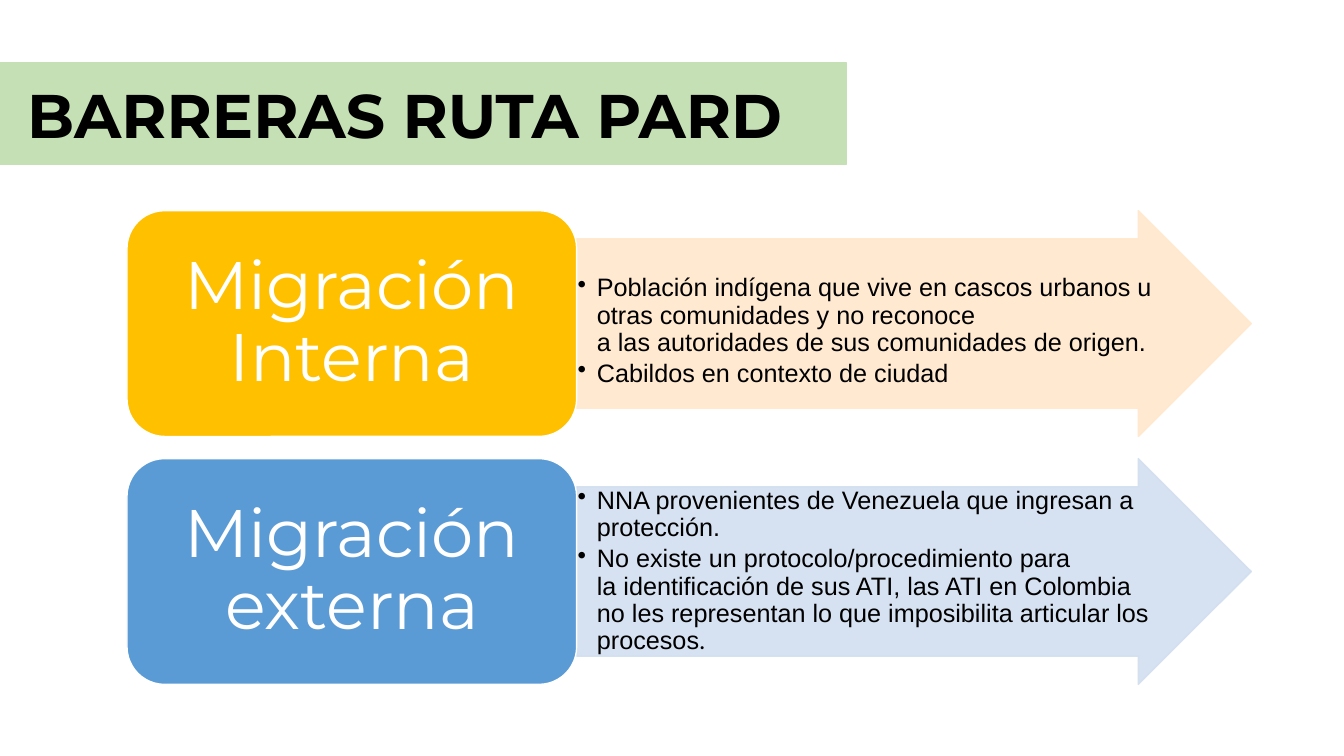
from lxml.etree import SubElement
from pptx import Presentation
from pptx.dml.color import RGBColor
from pptx.enum.shapes import MSO_SHAPE as Preset
from pptx.enum.text import MSO_ANCHOR as Anchor, PP_ALIGN as Align
from pptx.oxml.ns import qn
from pptx.util import Emu, Pt

PX = 9144  # one hundredth of an inch

BLACK = RGBColor(0x00, 0x00, 0x00)
WHITE = RGBColor(0xFF, 0xFF, 0xFF)
GREEN = RGBColor(0xC5, 0xE0, 0xB4)
AMBER = RGBColor(0xFF, 0xC0, 0x00)
PEACH = RGBColor(0xFF, 0xE8, 0xCC)
BLUE = RGBColor(0x5B, 0x9B, 0xD5)
PALE_BLUE = RGBColor(0xD2, 0xDF, 0xF0)

TITLE = {"name": "Montserrat", "size": Pt(44), "bold": True}
LABEL = {"name": "Montserrat", "size": Pt(48)}
BODY = {"name": "Arial", "size": Pt(18)}

# Each row: top, text offset, label, label colour, arrow colour, bullets.
# A bullet is a list of (text, font name); "~" is a non-breaking space.
ROWS = [
    (209, 63, "Migración Interna", AMBER, PEACH, [
        [("Población indígena que vive en~cascos urbanos u otras~comunidades "
          "y no reconoce a~las~autoridades de sus~comunidades de origen.", "Arial")],
        [("Cabildos en contexto de~ciudad", "Arial")],
    ]),
    (455, 28, "Migración externa", BLUE, PALE_BLUE, [
        [("NNA provenientes de Venezuela que~ingresan a protección.", "Arial")],
        [("No existe~un protocolo/procedimiento para la~identificación de sus "
          "ATI, las ATI en~Colombia no les~representan lo que imposibilita "
          "articular~los procesos", "Arial"), (".", "Calibri")],
    ]),
]


def px(*lengths):
    return [Emu(length * PX) for length in lengths]


def apply_format(target, values):
    for name, value in values.items():
        setattr(target, name, value)


def add_block(page, preset, place, fill, line, opacity=None, adjustments=()):
    """Add a filled, outlined shape; opacity is a percentage."""
    block = page.shapes.add_shape(preset, *px(*place))
    block.shadow.inherit = False
    for index, value in enumerate(adjustments):
        block.adjustments[index] = value
    block.fill.solid()
    block.fill.fore_color.rgb = fill
    block.line.color.rgb = line
    block.line.width = Pt(1)
    if opacity:
        for color in block._element.spPr.iter(qn("a:srgbClr")):
            SubElement(color, qn("a:alpha"), val=str(opacity * 1000))


def add_frame(page, place, **values):
    frame = page.shapes.add_textbox(*px(*place)).text_frame
    apply_format(frame, {"word_wrap": True, **values})
    return frame


def add_span(para, text, font, color):
    span = para.add_run()
    span.text = text
    apply_format(span.font, font)
    span.font.color.rgb = color


def add_line_of_text(page, place, text, font, color, para_format, **frame_format):
    para = add_frame(page, place, **frame_format).paragraphs[0]
    apply_format(para, para_format)
    add_span(para, text, font, color)


def add_bullets(page, place, bullets):
    margins = dict.fromkeys(
        ("margin_left", "margin_top", "margin_right", "margin_bottom"), Emu(PX))
    frame = add_frame(page, place, **margins)
    for index, spans in enumerate(bullets):
        para = frame.add_paragraph() if index else frame.paragraphs[0]
        properties = para._p.get_or_add_pPr()
        properties.set("marL", str(19 * PX))
        properties.set("indent", str(-19 * PX))
        SubElement(properties, qn("a:buChar"), char="•")
        apply_format(para, {"line_spacing": 0.9, "space_after": Pt(2.7)})
        for text, font_name in spans:
            font = {**BODY, "name": font_name}
            add_span(para, text.replace("~", chr(160)), font, BLACK)


def add_row(page, top, text_offset, label, label_color, arrow_color, bullets):
    add_block(page, Preset.RIGHT_ARROW, (572, top, 669, 224), arrow_color,
              arrow_color, opacity=90, adjustments=(0.75, 0.5))
    add_bullets(page, (572, top + text_offset, 585, 196 - text_offset), bullets)
    add_block(page, Preset.ROUNDED_RECTANGLE, (126, top, 446, 224), label_color, WHITE)
    side, edge = px(20, 10)
    add_line_of_text(page, (137, top + 11, 424, 202), label, LABEL, WHITE,
                     {"alignment": Align.CENTER, "line_spacing": 0.9},
                     vertical_anchor=Anchor.MIDDLE, margin_left=side,
                     margin_right=side, margin_top=edge, margin_bottom=edge)


def main():
    deck = Presentation()
    deck.slide_width, deck.slide_height = px(1333, 750)
    page = deck.slides.add_slide(deck.slide_layouts[6])
    add_block(page, Preset.RECTANGLE, (-1, 62, 840, 101), GREEN, GREEN)
    add_line_of_text(page, (17, 71, 852, 84), "BARRERAS RUTA PARD", TITLE, BLACK, {})
    for row in ROWS:
        add_row(page, *row)
    deck.save("out.pptx")


if __name__ == "__main__":
    main()
